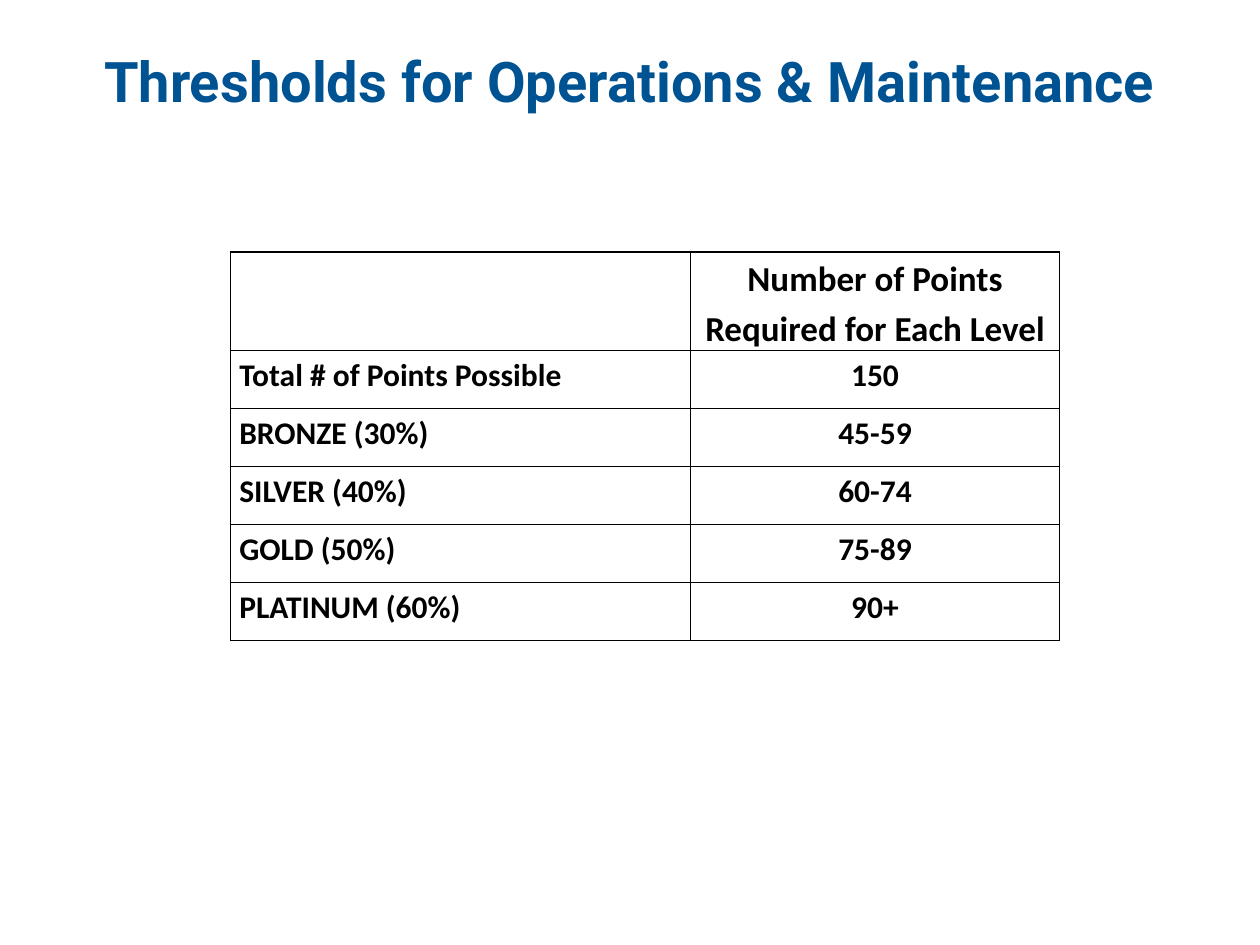
from pptx import Presentation
from pptx.dml.color import RGBColor as Color
from pptx.enum.text import MSO_ANCHOR as Anchor, PP_ALIGN as Align
from pptx.oxml import parse_xml
from pptx.oxml.ns import nsdecls
from pptx.util import Inches, Pt

COLORS = {"title": "005392", "ink": "000000"}
COLUMN_WIDTHS = [3.65, 2.93]
HEADER_HEIGHT, ROW_HEIGHT = 0.78, 0.46
ROWS = [
    ("", "Number of Points Required for Each Level"),
    ("Total # of Points Possible", "150"),
    ("BRONZE (30%)", "45-59"),
    ("SILVER (40%)", "60-74"),
    ("GOLD (50%)", "75-89"),
    ("PLATINUM (60%)", "90+"),
]


def style_paragraph(para, font_name, size, color, align, spacing):
    para.alignment = align
    para.line_spacing = spacing
    para.font.name = font_name
    para.font.size = Pt(size)
    para.font.bold = True
    para.font.color.rgb = Color.from_string(COLORS[color])


def add_borders(cell):
    properties = cell._tc.get_or_add_tcPr()
    for position, side in enumerate(("lnL", "lnR", "lnT", "lnB")):
        line = parse_xml(
            f'<a:{side} {nsdecls("a")} w="{Pt(1)}"><a:solidFill>'
            f'<a:srgbClr val="{COLORS["ink"]}"/></a:solidFill></a:{side}>'
        )
        properties.insert(position, line)


deck = Presentation()
deck.slide_width, deck.slide_height = Inches(10), Inches(7.5)
page = deck.slides.add_slide(deck.slide_layouts[5])

title = page.shapes.title
title.left, title.top = 0, Inches(0.42)
title.width, title.height = deck.slide_width, Inches(1.25)
title.text_frame.text = "Thresholds for Operations & Maintenance"
title.text_frame.vertical_anchor = Anchor.TOP
style_paragraph(title.text_frame.paragraphs[0], "Roboto", 32, "title", Align.CENTER, 0.8)

table_height = HEADER_HEIGHT + ROW_HEIGHT * (len(ROWS) - 1)
table = page.shapes.add_table(
    len(ROWS), len(COLUMN_WIDTHS),
    Inches(1.83), Inches(2), Inches(sum(COLUMN_WIDTHS)), Inches(table_height),
).table
table.first_row = table.horz_banding = False
for column, width in zip(table.columns, COLUMN_WIDTHS):
    column.width = Inches(width)

for row_number, texts in enumerate(ROWS):
    is_header = row_number == 0
    table.rows[row_number].height = Inches(HEADER_HEIGHT if is_header else ROW_HEIGHT)
    for column_number, text in enumerate(texts):
        cell = table.cell(row_number, column_number)
        cell.text = text
        cell.fill.background()
        cell.margin_left = cell.margin_right = Inches(0.07)
        cell.margin_top = cell.margin_bottom = 0
        style_paragraph(
            cell.text_frame.paragraphs[0], "Calibri", 20 if is_header else 18, "ink",
            Align.CENTER if column_number else Align.LEFT, 1.15,
        )
        add_borders(cell)

deck.save("out.pptx")
